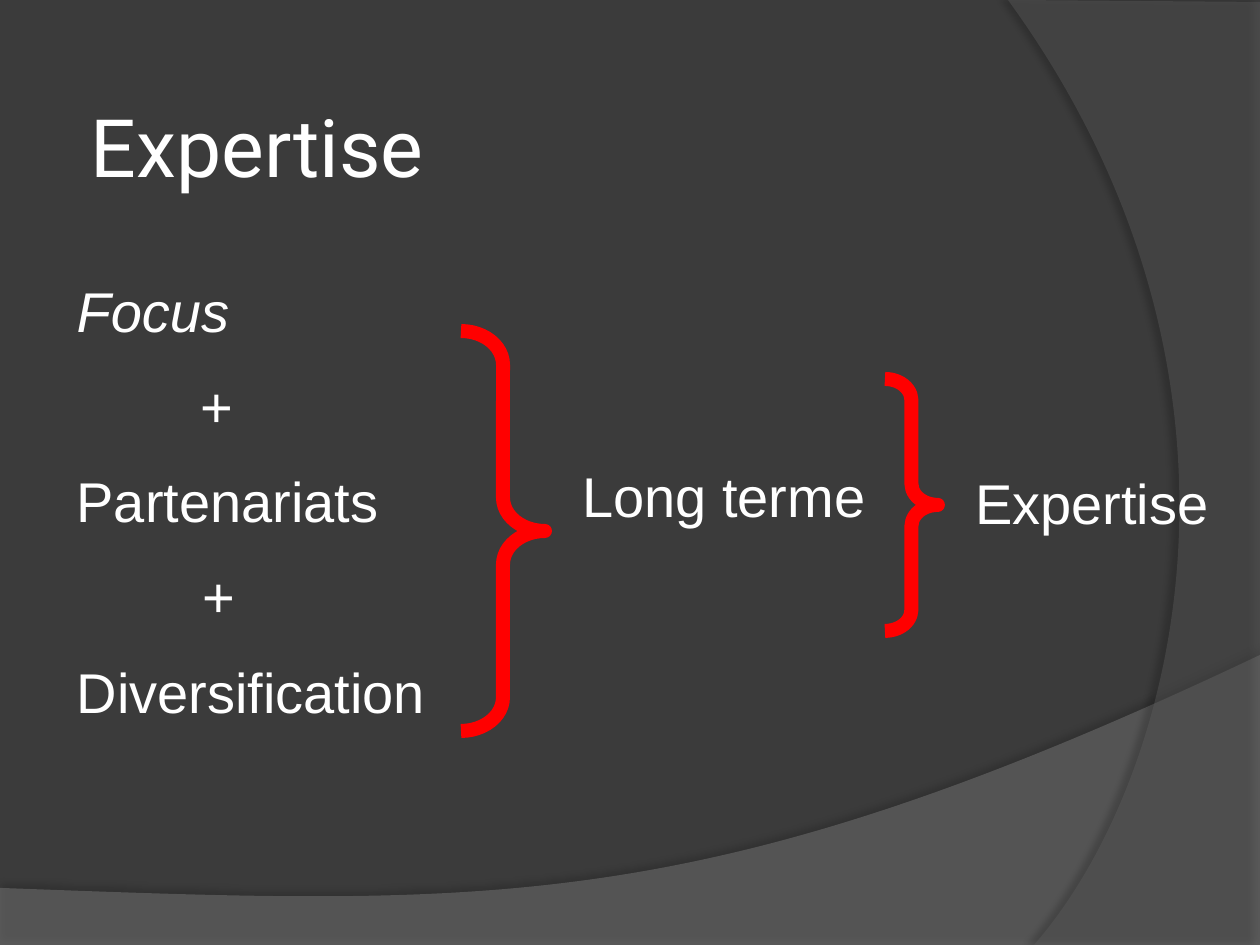
from dataclasses import dataclass

from lxml.etree import SubElement as Sub
from pptx import Presentation
from pptx.dml.color import RGBColor
from pptx.enum.shapes import MSO_SHAPE as Shape
from pptx.enum.text import MSO_ANCHOR as Anchor, MSO_AUTO_SIZE as Auto, PP_ALIGN as Align
from pptx.oxml.ns import qn
from pptx.util import Pt

SCALE = 914400 / 126
DARK = RGBColor(0x3B, 0x3B, 0x3B)
GREY = RGBColor(0x7F, 0x7F, 0x7F)
SLATE = RGBColor(0x5E, 0x5E, 0x5E)
BLACK = RGBColor(0, 0, 0)
WHITE = RGBColor(0xFF, 0xFF, 0xFF)
RED = RGBColor(0xFF, 0, 0)

Point = tuple[int, int]


@dataclass
class Box:
    left: int
    top: int
    width: int
    height: int

    def emu(self) -> list[int]:
        return [px(n) for n in (self.left, self.top, self.width, self.height)]


@dataclass
class Row:
    text: str
    indent: int = 0
    italic: bool = False


@dataclass
class Brace:
    box: Box
    bend: float


@dataclass
class Band:
    edge: list[Point]
    curve: list[Point]
    color: RGBColor
    alpha: int
    shade: int
    dist: float
    angle: int


BANDS = [
    Band([(0, 888), (0, 945), (1260, 945), (1260, 655)],
         [(704, 919), (493, 906), (0, 888)], GREY, 45, 35, 3.5, 270),
    Band([(1260, 2), (1260, 945), (1034, 945)],
         [(1178, 780), (1283, 378), (1008, 0)], SLATE, 40, 45, 4, 180),
]
BRACES = [
    Brace(Box(461, 331, 84, 400), 0.4),
    Brace(Box(885, 379, 53, 252), 0.4),
]
LABELS = [
    (Box(924, 462, 336, 80), "Expertise"),
    (Box(514, 455, 420, 80), "Long terme"),
]
LIST = [
    Row("Focus", italic=True),
    Row("+", 124),
    Row("Partenariats"),
    Row("+", 126),
    Row("Diversification"),
]


def px(n: float) -> int:
    return round(n * SCALE)


def fade(color, alpha: int) -> None:
    Sub(color, qn("a:alpha"), val=str(alpha * 1000))


def curve_end(props, band: Band) -> None:
    spots = band.edge + band.curve[-1:]
    left = min(x for x, _ in spots)
    top = min(y for _, y in spots)
    last = props.findall(".//" + qn("a:lnTo"))[-1]
    route = last.getparent()
    arc = Sub(route, qn("a:cubicBezTo"))
    for x, y in band.curve:
        Sub(arc, qn("a:pt"), x=str(x - left), y=str(y - top))
    route.replace(last, arc)


def draw_band(slide, band: Band) -> None:
    pen = slide.shapes.build_freeform(*band.edge[0], scale=SCALE)
    pen.add_line_segments(band.edge[1:] + band.curve[-1:], close=True)
    form = pen.convert_to_shape()
    form.fill.solid()
    form.fill.fore_color.rgb = band.color
    form.line.fill.background()
    form.shadow.inherit = False
    props = form._element.spPr
    curve_end(props, band)
    fade(props.find(qn("a:solidFill"))[0], band.alpha)
    cast = Sub(props.find(qn("a:effectLst")), qn("a:outerShdw"),
               blurRad=str(Pt(4)), dist=str(Pt(band.dist)),
               dir=str(band.angle * 60000), algn="ctr", rotWithShape="0")
    fade(Sub(cast, qn("a:srgbClr"), val=str(BLACK)), band.shade)
    slide.shapes._spTree.insert(2, form._element)


def draw_brace(slide, brace: Brace) -> None:
    form = slide.shapes.add_shape(Shape.RIGHT_BRACE, *brace.box.emu())
    form.adjustments[0] = brace.bend
    form.adjustments[1] = 0.5
    form.fill.background()
    form.line.color.rgb = RED
    form.line.width = Pt(8)
    form.shadow.inherit = False


def write(form, box: Box, rows: list[Row], *, size: int = 32,
          font: str = "Arial", align: Align = Align.LEFT) -> None:
    form.left, form.top, form.width, form.height = box.emu()
    frame = form.text_frame
    frame.word_wrap = True
    frame.auto_size = Auto.NONE
    frame.vertical_anchor = Anchor.TOP
    for i, row in enumerate(rows):
        para = frame.add_paragraph() if i else frame.paragraphs[0]
        para.alignment = align
        para.space_before = Pt(16 if i else 0)
        props = para._p.get_or_add_pPr()
        props.set("marL", str(px(row.indent)))
        props.set("indent", "0")
        Sub(props, qn("a:buNone"))
        run = para.add_run()
        run.text = row.text
        run.font.name = font
        run.font.size = Pt(size)
        run.font.italic = row.italic
        run.font.color.rgb = WHITE


def main() -> None:
    deck = Presentation()
    deck.slide_width, deck.slide_height = px(1260), px(945)
    slide = deck.slides.add_slide(deck.slide_layouts[1])
    back = slide.background.fill
    back.solid()
    back.fore_color.rgb = DARK
    for band in reversed(BANDS):
        draw_band(slide, band)
    write(slide.shapes.title, Box(78, 91, 1013, 111), [Row("Expertise")],
          size=46, font="Roboto")
    write(slide.placeholders[1], Box(64, 270, 410, 488), LIST)
    for brace in BRACES:
        draw_brace(slide, brace)
    for box, text in LABELS:
        label = slide.shapes.add_textbox(*box.emu())
        write(label, box, [Row(text)], align=Align.CENTER)
    deck.save("out.pptx")


if __name__ == "__main__":
    main()
